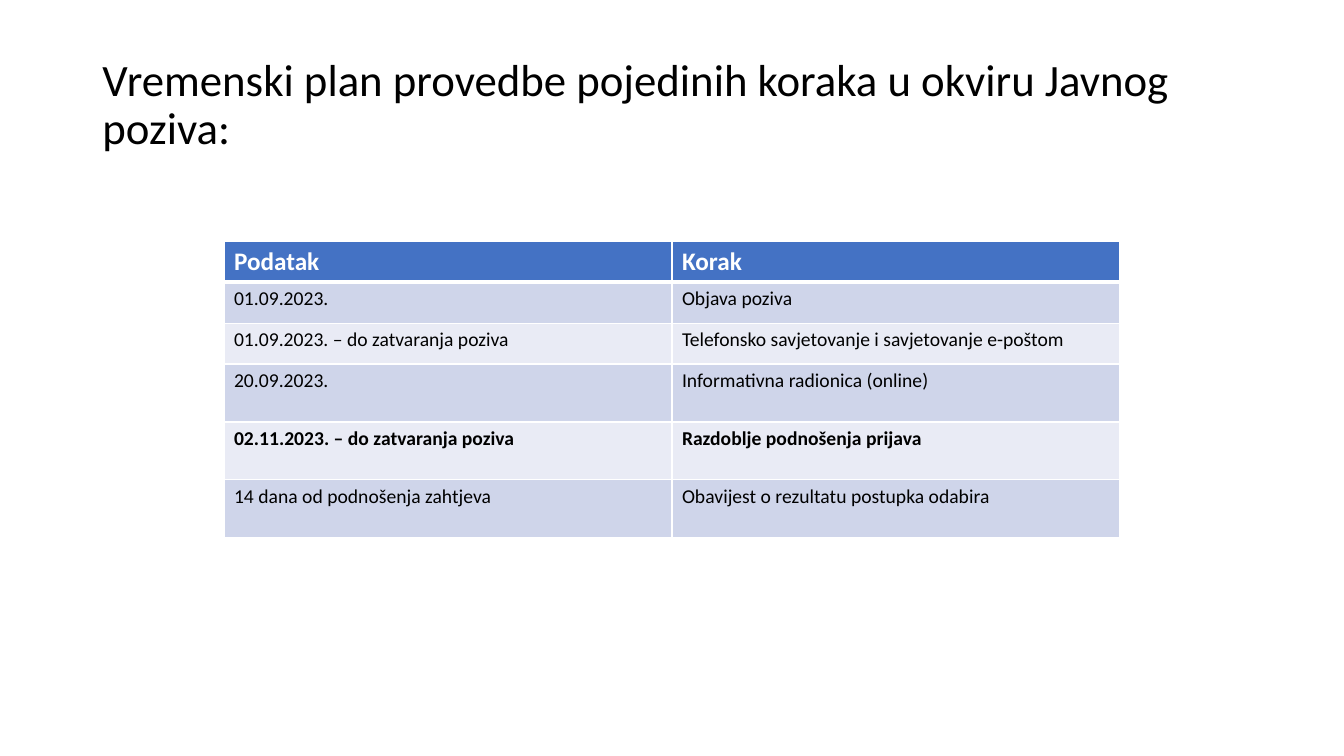
"""Build a slide with the time plan of a public call."""
from dataclasses import dataclass

from lxml import etree
from pptx import Presentation
from pptx.dml.color import RGBColor
from pptx.enum.text import MSO_ANCHOR, MSO_AUTO_SIZE, PP_ALIGN
from pptx.oxml.ns import qn
from pptx.util import Pt

LEFT = PP_ALIGN.LEFT
TOP, BOTTOM = MSO_ANCHOR.TOP, MSO_ANCHOR.BOTTOM
NO_FIT = MSO_AUTO_SIZE.NONE

TITLE = "Vremenski plan provedbe pojedinih koraka u okviru Javnog poziva:"
HEAD = ("Podatak", "Korak")
STEPS = [
    ("01.09.2023.", "Objava poziva"),
    ("01.09.2023. – do zatvaranja poziva", "Telefonsko savjetovanje i savjetovanje e-poštom"),
    ("20.09.2023.", "Informativna radionica (online)"),
    ("02.11.2023. – do zatvaranja poziva", "Razdoblje podnošenja prijava"),
    ("14 dana od podnošenja zahtjeva", "Obavijest o rezultatu postupka odabira"),
]
KEY_ROW = 4
LOW, TALL = 29.2, 41.4
HEIGHTS = [LOW] * 3 + [TALL] * 3
COL_W = 320
TABLE_X, TABLE_Y = 160, 172.4
TITLE_BOX = (66, 36, 861, 78)


@dataclass(frozen=True)
class Theme:
    """Colours, type sizes and line widths."""
    font: str = "Calibri"
    ink: str = "000000"
    white: str = "FFFFFF"
    head: str = "4472C4"
    bands: tuple = ("E9EBF5", "CFD5EA")
    title_pt: int = 32
    head_pt: int = 18
    body_pt: int = 14
    thin: int = 1
    thick: int = 3


THEME = Theme()


def write(frame, text, size, color=THEME.ink, bold=False, space=1.0):
    """Put formatted text into a frame."""
    para = frame.paragraphs[0]
    para.alignment = LEFT
    para.line_spacing = space
    run = para.add_run()
    run.text = text
    font = run.font
    font.name, font.size, font.bold = THEME.font, Pt(size), bold
    font.color.rgb = RGBColor.from_string(color)


def edge(cell, side, width):
    """Draw one white border of a cell."""
    line = etree.SubElement(cell._tc.get_or_add_tcPr(), qn("a:ln" + side), w=str(Pt(width)))
    fill = etree.SubElement(line, qn("a:solidFill"))
    etree.SubElement(fill, qn("a:srgbClr"), val=THEME.white)


def add_title(slide):
    """Place and fill the title."""
    title = slide.shapes.title
    title.left, title.top, title.width, title.height = map(Pt, TITLE_BOX)
    frame = title.text_frame
    frame.auto_size = NO_FIT
    frame.word_wrap = True
    frame.vertical_anchor = BOTTOM
    write(frame, TITLE, THEME.title_pt, space=0.9)


def add_plan(slide):
    """Add the table of dates and steps."""
    rows = [HEAD] + STEPS
    table = slide.shapes.add_table(
        len(rows), len(HEAD), Pt(TABLE_X), Pt(TABLE_Y),
        Pt(COL_W * len(HEAD)), Pt(sum(HEIGHTS))).table
    for col in table.columns:
        col.width = Pt(COL_W)
    for r, (row, high) in enumerate(zip(rows, HEIGHTS)):
        table.rows[r].height = Pt(high)
        top = r == 0
        widths = {
            "L": THEME.thin,
            "R": THEME.thin,
            "T": THEME.thick if r == 1 else THEME.thin,
            "B": THEME.thick if top else THEME.thin,
        }
        for c, text in enumerate(row):
            cell = table.cell(r, c)
            cell.vertical_anchor = TOP
            for side, width in widths.items():
                edge(cell, side, width)
            cell.fill.solid()
            cell.fill.fore_color.rgb = RGBColor.from_string(
                THEME.head if top else THEME.bands[r % 2])
            write(cell.text_frame, text,
                  THEME.head_pt if top else THEME.body_pt,
                  color=THEME.white if top else THEME.ink,
                  bold=top or r == KEY_ROW)


def main():
    """Build and save the deck."""
    deck = Presentation()
    deck.slide_width, deck.slide_height = Pt(960), Pt(540)
    slide = deck.slides.add_slide(deck.slide_layouts[5])
    add_title(slide)
    add_plan(slide)
    deck.save("out.pptx")


if __name__ == "__main__":
    main()
